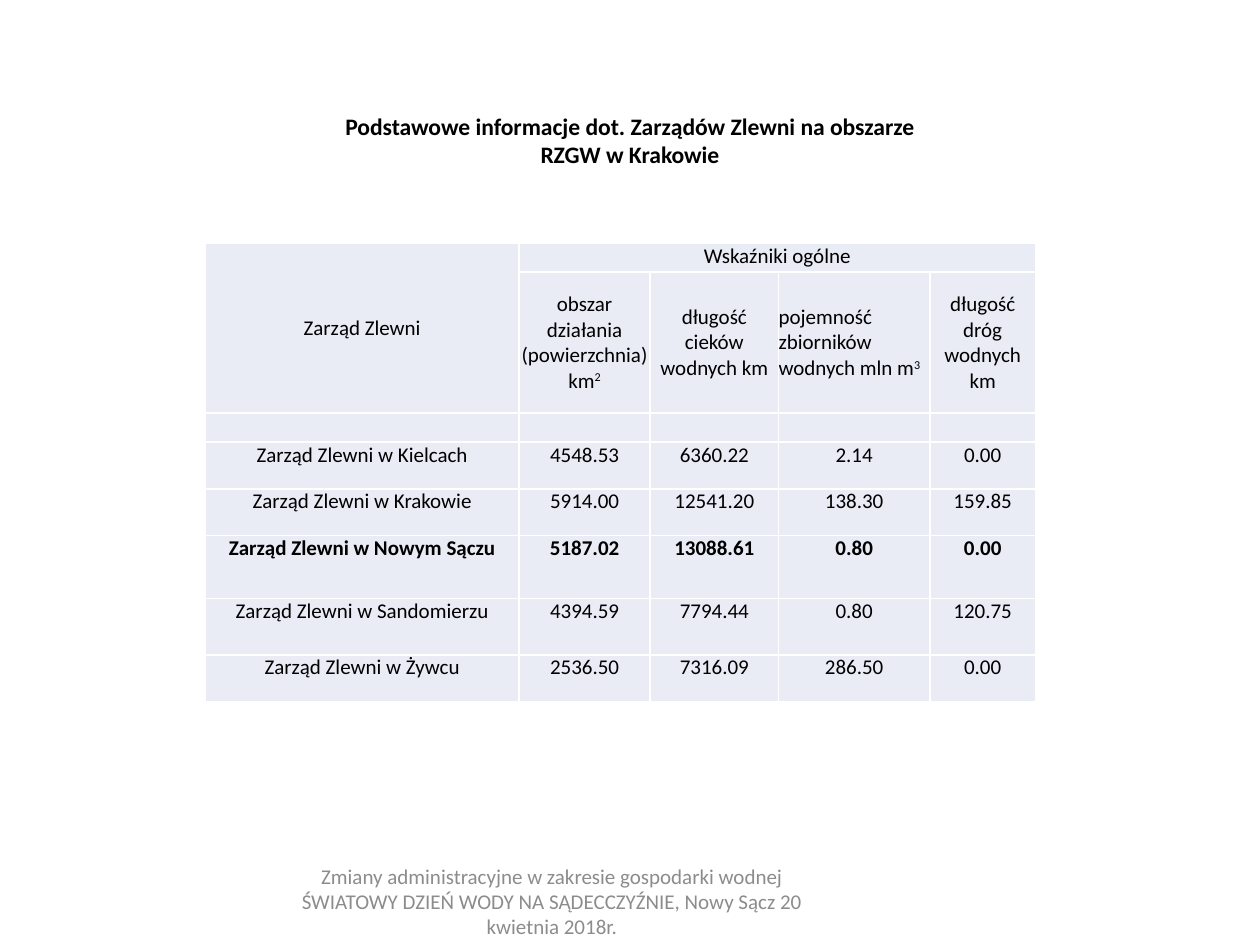
from dataclasses import dataclass

from lxml import etree
from pptx import Presentation
from pptx.dml.color import RGBColor
from pptx.enum.text import MSO_ANCHOR as Anchor, PP_ALIGN as Align
from pptx.oxml.ns import qn
from pptx.util import Inches, Pt


@dataclass(frozen=True)
class Theme:
    font: str = "Calibri"
    title_size: float = 13.5
    body_size: float = 12
    text: RGBColor = RGBColor(0x00, 0x00, 0x00)
    footer: RGBColor = RGBColor(0x8C, 0x8C, 0x8C)
    cell: RGBColor = RGBColor(0xE9, 0xEB, 0xF5)
    border: RGBColor = RGBColor(0xFF, 0xFF, 0xFF)


theme = Theme()


def style(paragraph, size=theme.body_size, color=theme.text, bold=False, align=Align.CENTER):
    paragraph.alignment = align
    font = paragraph.font
    font.name, font.size, font.bold = theme.font, Pt(size), bold
    font.color.rgb = color


def add_border(cell, side):
    line = etree.SubElement(cell._tc.get_or_add_tcPr(), qn(f"a:{side}"), w=str(Pt(1)))
    fill = etree.SubElement(line, qn("a:solidFill"))
    etree.SubElement(fill, qn("a:srgbClr"), val=str(theme.border))


presentation = Presentation()
presentation.slide_width, presentation.slide_height = Inches(10), Inches(7.5)
slide = presentation.slides.add_slide(presentation.slide_layouts[6])

# Table contents: group header, column headers, spacer row, data
group_header = ["Zarząd Zlewni", "Wskaźniki ogólne", "", "", ""]
column_headers = [
    "",
    "obszar działania (powierzchnia) km",
    "długość cieków wodnych km",
    "pojemność zbiorników wodnych mln m",
    "długość dróg wodnych km",
]
superscripts = {(1, 1): "2", (1, 3): "3"}
data = [
    ["Zarząd Zlewni w Kielcach", "4548.53", "6360.22", "2.14", "0.00"],
    ["Zarząd Zlewni w Krakowie", "5914.00", "12541.20", "138.30", "159.85"],
    ["Zarząd Zlewni w Nowym Sączu", "5187.02", "13088.61", "0.80", "0.00"],
    ["Zarząd Zlewni w Sandomierzu", "4394.59", "7794.44", "0.80", "120.75"],
    ["Zarząd Zlewni w Żywcu", "2536.50", "7316.09", "286.50", "0.00"],
]
rows = [group_header, column_headers, [""] * 5, *data]
column_widths = [2.49, 1.04, 1.02, 1.2, 0.84]
row_heights = [0.23, 1.12, 0.23, 0.37, 0.37, 0.5, 0.45, 0.37]
highlighted_row = 5

# Table grid
table = slide.shapes.add_table(
    len(rows), len(column_widths), Inches(1.63), Inches(1.93),
    Inches(sum(column_widths)), Inches(sum(row_heights)),
).table
table.first_row = table.horz_banding = False
for column, width in zip(table.columns, column_widths):
    column.width = Inches(width)
for row, height in zip(table.rows, row_heights):
    row.height = Inches(height)
table.cell(0, 0).merge(table.cell(1, 0))
table.cell(0, 1).merge(table.cell(0, 4))

# Table cells
for row_index, values in enumerate(rows):
    for column_index, value in enumerate(values):
        cell = table.cell(row_index, column_index)
        cell.margin_left = cell.margin_right = cell.margin_top = cell.margin_bottom = 0
        is_header = row_index == 1 or (row_index, column_index) == (0, 0)
        cell.vertical_anchor = Anchor.MIDDLE if is_header else Anchor.TOP
        for side in ("lnL", "lnR", "lnT", "lnB"):
            add_border(cell, side)
        cell.fill.solid()
        cell.fill.fore_color.rgb = theme.cell

        paragraph = cell.text_frame.paragraphs[0]
        align = Align.LEFT if (row_index, column_index) == (1, 3) else Align.CENTER
        style(paragraph, bold=row_index == highlighted_row, align=align)
        if value:
            paragraph.add_run().text = value
        if (row_index, column_index) in superscripts:
            run = paragraph.add_run()
            run.text = superscripts[row_index, column_index]
            run._r.get_or_add_rPr().set("baseline", "30000")

# Footer
footer = slide.shapes.add_textbox(Inches(2.07), Inches(6.95), Inches(4.62), Inches(0.4))
footer.text_frame.word_wrap = True
footer.text_frame.vertical_anchor = Anchor.MIDDLE
footer.text_frame.text = (
    "Zmiany administracyjne w zakresie gospodarki wodnej "
    "ŚWIATOWY DZIEŃ WODY NA SĄDECCZYŹNIE, Nowy Sącz 20 kwietnia 2018r."
)
style(footer.text_frame.paragraphs[0], color=theme.footer)

# Title
title = slide.shapes.add_textbox(Inches(2.28), Inches(0.84), Inches(5.44), Inches(0.56))
title.text_frame.word_wrap = True
title.text_frame.text = "Podstawowe informacje dot. Zarządów Zlewni na obszarze\nRZGW w Krakowie"
for paragraph in title.text_frame.paragraphs:
    style(paragraph, size=theme.title_size, bold=True)

presentation.save("out.pptx")
